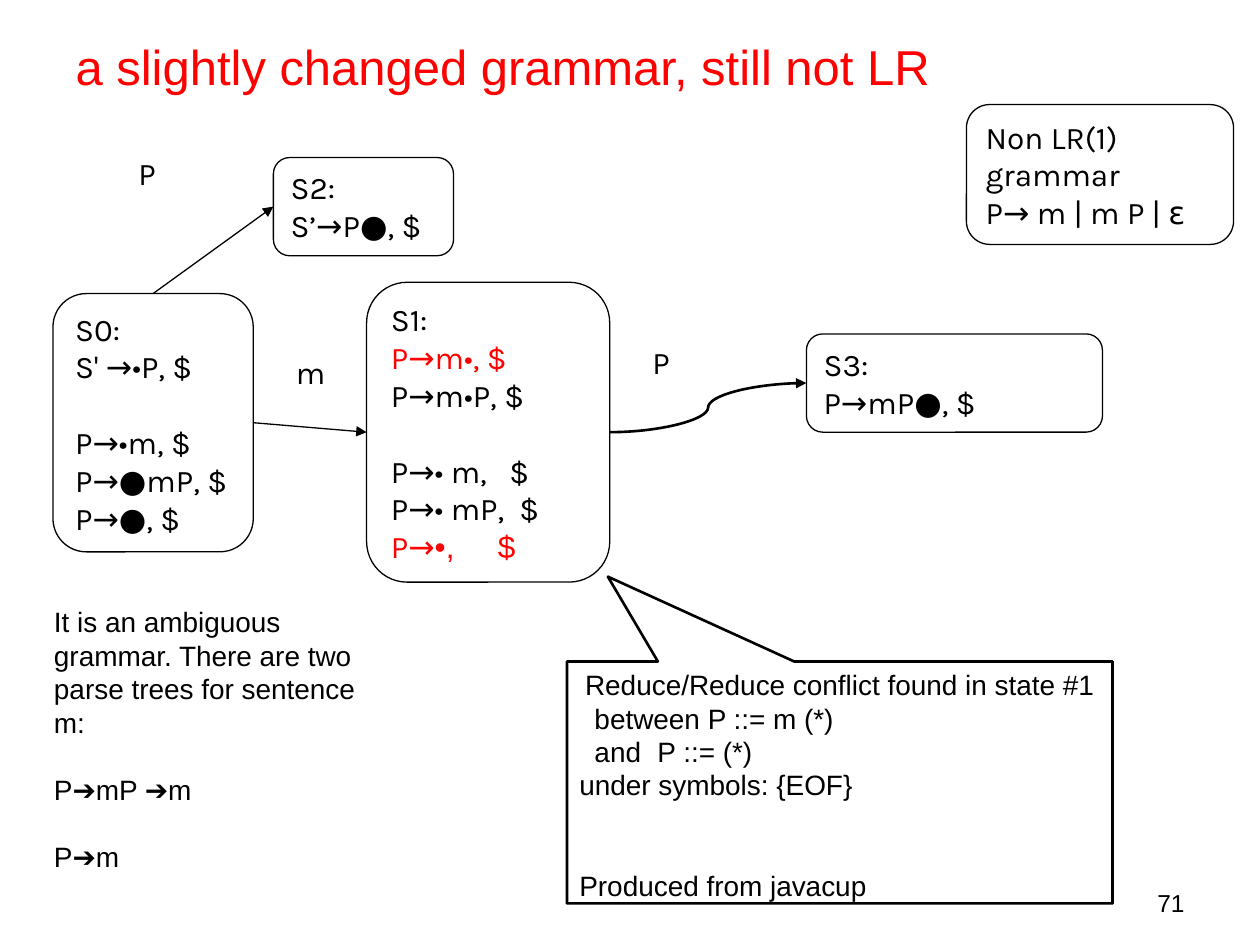
import dataclasses
import pptx
import pptx.dml.color
import pptx.enum.dml
import pptx.enum.shapes
import pptx.enum.text
import pptx.oxml.ns
import pptx.util
from lxml import etree

Inches = pptx.util.Inches
Pt = pptx.util.Pt
Kind = pptx.enum.shapes.MSO_SHAPE
Link = pptx.enum.shapes.MSO_CONNECTOR
Align = pptx.enum.text.PP_ALIGN
Anchor = pptx.enum.text.MSO_ANCHOR
Fit = pptx.enum.text.MSO_AUTO_SIZE
qn = pptx.oxml.ns.qn

BLACK = pptx.dml.color.RGBColor(0x00, 0x00, 0x00)
RED = pptx.dml.color.RGBColor(0xFF, 0x00, 0x00)
TOP, LEFT, RIGHT = 0, 1, 3


@dataclasses.dataclass
class Line:
    """One paragraph: its text or (text, font) runs, and its layout."""
    runs: object
    color: object = BLACK
    gap: float = 0
    tab: float = 0
    left: float = 0
    lead: float = 1
    align: object = Align.LEFT


class Deck:
    """Holds the style and the current slide, and draws each kind of element."""

    def __init__(self, sans="Arial", state="Karla"):
        self.sans, self.state = sans, state
        self.prs = pptx.Presentation()
        self.prs.slide_width, self.prs.slide_height = Inches(10), Inches(7.5)
        self.slide = self.prs.slides.add_slide(self.prs.slide_layouts[5])

    def fill(self, frame, lines, font, size):
        frame.word_wrap = True
        for num, line in enumerate(lines):
            line = Line(line) if isinstance(line, str) else line
            para = frame.add_paragraph() if num else frame.paragraphs[0]
            para.alignment = line.align
            para.line_spacing = line.lead
            para.space_before = Pt(line.gap)
            props = para._p.get_or_add_pPr()
            if line.left:
                props.set("marL", str(Inches(line.left)))
                props.set("indent", "0")
            if line.tab:
                tabs = etree.SubElement(props, qn("a:tabLst"))
                etree.SubElement(tabs, qn("a:tab"), pos=str(Inches(line.tab)), algn="l")
            runs = [(line.runs, font)] if isinstance(line.runs, str) else line.runs
            for text, face in runs:
                run = para.add_run()
                run.text = text
                run.font.name, run.font.size = face, Pt(size)
                run.font.color.rgb = line.color

    def title(self, text, x, y, w, h):
        shape = self.slide.shapes.title
        shape.left, shape.top, shape.width, shape.height = map(Inches, (x, y, w, h))
        shape.text_frame.auto_size = Fit.NONE
        shape.text_frame.vertical_anchor = Anchor.MIDDLE
        self.fill(shape.text_frame, [Line(text, RED)], self.sans, 28)

    def label(self, lines, x, y, w, h, font, size):
        box = self.slide.shapes.add_textbox(*map(Inches, (x, y, w, h)))
        self.fill(box.text_frame, lines, font, size)

    def shape(self, kind, lines, x, y, w, h, font, size, width):
        shape = self.slide.shapes.add_shape(kind, *map(Inches, (x, y, w, h)))
        shape.shadow.inherit = False
        shape.fill.background()
        shape.line.color.rgb, shape.line.width = BLACK, Pt(width)
        shape.text_frame.vertical_anchor = Anchor.TOP
        self.fill(shape.text_frame, lines, font, size)
        return shape

    def box(self, lines, x, y, w, h):
        shape = self.shape(Kind.ROUNDED_RECTANGLE, lines, x, y, w, h, self.state, 18, 0.75)
        shape.text_frame.auto_size = Fit.SHAPE_TO_FIT_TEXT
        return shape

    def callout(self, lines, x, y, w, h, tip):
        shape = self.shape(Kind.RECTANGULAR_CALLOUT, lines, x, y, w, h, self.sans, 16, 1.5)
        shape.adjustments[0], shape.adjustments[1] = tip

    def arrow(self, start, side, end, kind=Link.STRAIGHT, width=0.75):
        link = self.slide.shapes.add_connector(kind, 0, 0, 0, 0)
        link.begin_connect(start, side)
        link.end_connect(end, LEFT)
        link.line.color.rgb, link.line.width = BLACK, Pt(width)
        etree.SubElement(link.line._get_or_add_ln(), qn("a:tailEnd"), type="triangle")
        etree.SubElement(link._element.spPr, qn("a:effectLst"))


def main():
    deck = Deck()
    deck.title("a slightly changed grammar, still not LR", 0.5, 0.3, 9.5, 0.45)
    deck.label([Line("71", align=Align.RIGHT)], 7.17, 7, 2.33, 0.35, deck.sans, 14)

    first = deck.box(["S0:", "S' →•P, $", Line("P→•m, $", gap=21.6),
                      "P→●mP, $", "P→●, $"], 0.42, 2.33, 1.59, 2.05)
    shift = deck.box(["S1:", Line("P→m•, $", RED), "P→m•P, $",
                      Line("P→• m,\t$", gap=21.6, tab=0.94),
                      Line("P→• mP,\t$", tab=1.02),
                      Line([("P→", deck.state), ("•,\t$", deck.sans)], RED, tab=0.85)],
                     2.91, 2.24, 1.93, 2.38)
    goal = deck.box(["S2:", "S’→P●, $"], 2.17, 1.25, 1.43, 0.78)
    last = deck.box(["S3:", "P→mP●, $"], 6.4, 2.65, 2.35, 0.78)
    deck.box(["Non LR(1) grammar", "P→ m | m P | ε"], 7.67, 0.83, 2.12, 1.11)

    deck.arrow(first, RIGHT, shift)
    deck.arrow(first, TOP, goal)
    deck.arrow(shift, RIGHT, last, Link.CURVE, 1.5)
    for text, x, y in (("m", 2.25, 2.75), ("P", 1, 1.17), ("P", 5.08, 2.67)):
        deck.label([text], x, y, 0.73, 0.4, deck.state, 18)

    deck.callout([Line("Reduce/Reduce conflict found in state #1", align=Align.CENTER),
                  Line("between P ::= m (*)", left=0.12),
                  Line("and\tP ::= (*)", left=0.12, tab=0.8),
                  Line("under symbols: {EOF}", gap=3.2, lead=0.8),
                  Line("Produced from javacup", gap=38.4)],
                 4.5, 5.25, 4.33, 1.92, (-0.425, -0.851))
    deck.label(["It is an ambiguous grammar. There are two parse trees for sentence m:",
                Line("P➔mP ➔m", gap=19.2), Line("P➔m", gap=19.2)],
               0.33, 4.75, 2.75, 2.24, deck.sans, 16)
    deck.prs.save("out.pptx")


if __name__ == "__main__":
    main()
